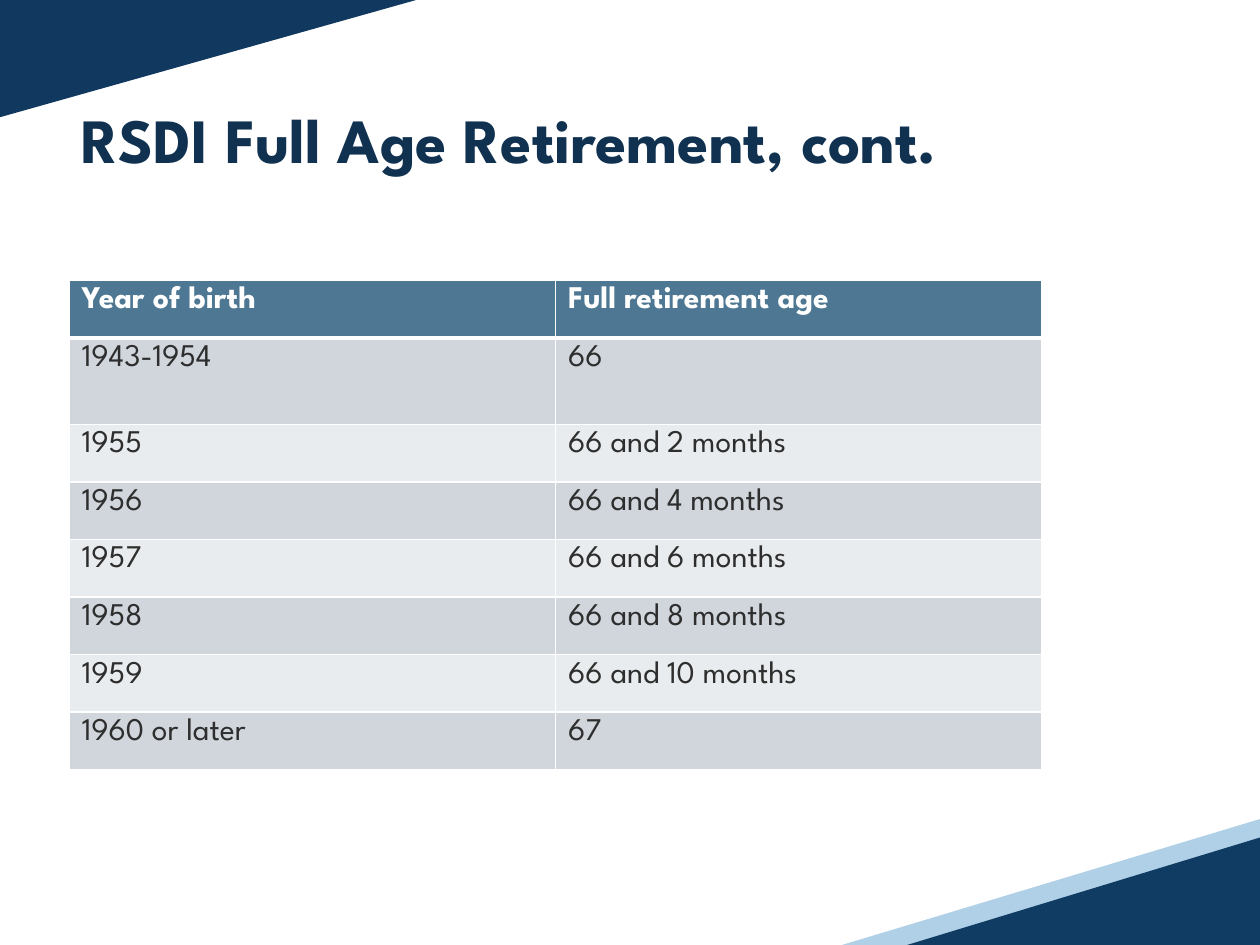
import pptx
import pptx.dml.color
import pptx.enum.shapes
import pptx.enum.text
import pptx.oxml
import pptx.oxml.ns
import pptx.util
from pptx.util import Pt

FONT = "League Spartan"
SLIDE_WIDTH, SLIDE_HEIGHT = 720, 540
ROW_HEIGHT, TALL_ROW_HEIGHT = 32.9, 49.5
COLUMN_WIDTH = 277.9
HEADER_FILL = "4D7792"
BAND_FILLS = ["E9ECEE", "D0D6DC"]
RETIREMENT_AGES = [
    ("Year of birth", "Full retirement age"),
    ("1943-1954", "66"),
    ("1955", "66 and 2 months"),
    ("1956", "66 and 4 months"),
    ("1957", "66 and 6 months"),
    ("1958", "66 and 8 months"),
    ("1959", "66 and 10 months"),
    ("1960 or later", "67"),
]


def color(hex_code):
    return pptx.dml.color.RGBColor.from_string(hex_code)


def write_text(frame, text, size=18, ink="2D2E2D", bold=False):
    paragraph = frame.paragraphs[0]
    run = paragraph.add_run()
    run.text = text
    run.font.name = FONT
    run.font.size = Pt(size)
    run.font.bold = bold
    run.font.color.rgb = color(ink)


def add_stripe(slide, start, end, hex_code, width):
    stripe = slide.shapes.add_connector(
        pptx.enum.shapes.MSO_CONNECTOR.STRAIGHT,
        *[Pt(value) for value in start + end])
    stripe.line.color.rgb = color(hex_code)
    stripe.line.width = Pt(width)
    pptx.oxml.ns.qn("a:effectLst")
    stripe._element.spPr.append(pptx.oxml.parse_xml(
        f"<a:effectLst {pptx.oxml.ns.nsdecls('a')}/>"))


def add_corner(slide, left, top, width, height, rotation, hex_code):
    corner = slide.shapes.add_shape(
        pptx.enum.shapes.MSO_SHAPE.RIGHT_TRIANGLE,
        Pt(left), Pt(top), Pt(width), Pt(height))
    corner.rotation = rotation
    corner.shadow.inherit = False
    corner.fill.solid()
    corner.fill.fore_color.rgb = color(hex_code)
    corner.line.fill.background()


def add_title(slide, text):
    title = slide.shapes.add_textbox(Pt(39.6), Pt(46.8), Pt(513.4), Pt(64.8))
    title.text_frame.word_wrap = True
    title.text_frame.vertical_anchor = pptx.enum.text.MSO_ANCHOR.MIDDLE
    write_text(title.text_frame, text, size=36, ink="103150", bold=True)


def set_borders(cell, hex_code, bottom_width=1):
    properties = cell._tc.get_or_add_tcPr()
    widths = {"lnL": 1, "lnR": 1, "lnT": 1, "lnB": bottom_width}
    for position, (side, width) in enumerate(widths.items()):
        properties.insert(position, pptx.oxml.parse_xml(
            f'<a:{side} {pptx.oxml.ns.nsdecls("a")} w="{Pt(width)}">'
            f'<a:solidFill><a:srgbClr val="{hex_code}"/></a:solidFill>'
            f'</a:{side}>'))


def add_age_table(slide, records):
    heights = [ROW_HEIGHT] * len(records)
    heights[1] = TALL_ROW_HEIGHT
    table = slide.shapes.add_table(
        len(records), 2, Pt(39.6), Pt(160.2),
        Pt(2 * COLUMN_WIDTH), Pt(sum(heights))).table
    for column in table.columns:
        column.width = Pt(COLUMN_WIDTH)
    for index, record in enumerate(records):
        table.rows[index].height = Pt(heights[index])
        is_header = index == 0
        for column_index, text in enumerate(record):
            cell = table.cell(index, column_index)
            cell.fill.solid()
            cell.fill.fore_color.rgb = color(
                HEADER_FILL if is_header else BAND_FILLS[index % 2])
            set_borders(cell, "FFFFFF", bottom_width=3 if is_header else 1)
            write_text(cell.text_frame, text, bold=is_header,
                       ink="FFFFFF" if is_header else "2D2E2D")


def main():
    presentation = pptx.Presentation()
    presentation.slide_width = Pt(SLIDE_WIDTH)
    presentation.slide_height = Pt(SLIDE_HEIGHT)
    slide = presentation.slides.add_slide(presentation.slide_layouts[6])
    add_stripe(slide, (451.4, 559.4), (783.4, 459.4), "AFD0E6", 20)
    add_corner(slide, 569.5, 369.4, 86.4, 283.7, 270, "103B62")
    add_corner(slide, 92.9, -112.3, 79.9, 283.7, 90, "11395F")
    add_age_table(slide, RETIREMENT_AGES)
    add_title(slide, "RSDI Full Age Retirement, cont.")
    presentation.save("out.pptx")


if __name__ == "__main__":
    main()
